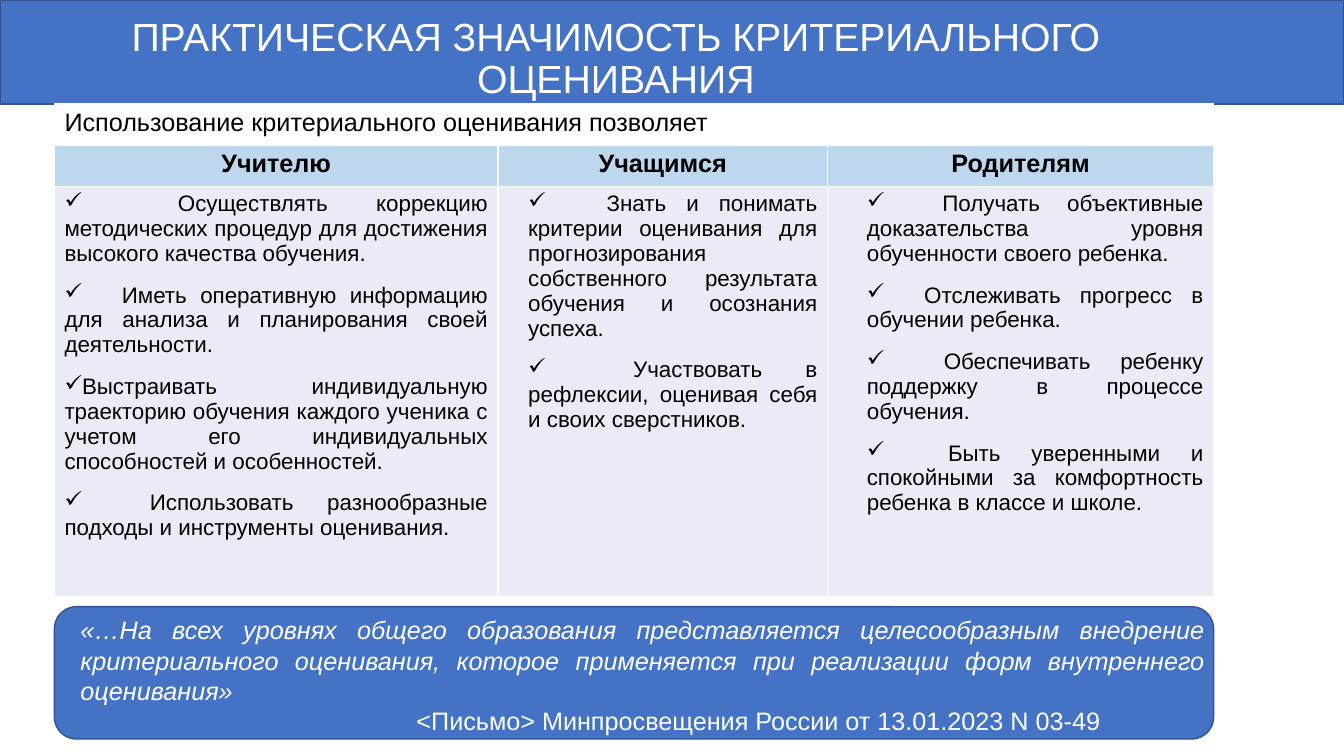
from lxml import etree
from pptx import Presentation
from pptx import util as u
from pptx.dml.color import RGBColor
from pptx.enum import shapes, text
from pptx.oxml.ns import qn

Pt = u.Pt
WHITE = RGBColor(0xFF, 0xFF, 0xFF)
BLACK = RGBColor(0, 0, 0)
BLUE = RGBColor(0x44, 0x72, 0xC4)
NAVY = RGBColor(0x32, 0x54, 0x91)
SKY = RGBColor(0xBD, 0xD7, 0xEE)
PALE = RGBColor(0xE9, 0xEB, 0xF5)
ALIGN = text.PP_ALIGN

TITLE = "ПРАКТИЧЕСКАЯ ЗНАЧИМОСТЬ КРИТЕРИАЛЬНОГО ОЦЕНИВАНИЯ"
INTRO = "Использование критериального оценивания позволяет"
QUOTE = ("«…На всех уровнях общего образования представляется целесообразным внедрение "
         "критериального оценивания, которое применяется при реализации форм внутреннего оценивания»")
SOURCE = "<Письмо> Минпросвещения России от 13.01.2023 N 03-49"

# Each audience: heading, column width, left cell margin, (tab stop, benefit) pairs
AUDIENCES = [
    ("Учителю", 316.8, 7.2, [
        (81, "Осуществлять коррекцию методических процедур для достижения высокого качества обучения."),
        (41, "Иметь оперативную информацию для анализа и планирования своей деятельности."),
        (0, "Выстраивать индивидуальную траекторию обучения каждого ученика с учетом его "
            "индивидуальных способностей и особенностей."),
        (61, "Использовать разнообразные подходы и инструменты оценивания.")]),
    ("Учащимся", 235.4, 21.6, [
        (56, "Знать и понимать критерии оценивания для прогнозирования собственного результата "
             "обучения и осознания успеха."),
        (75, "Участвовать в рефлексии, оценивая себя и своих сверстников.")]),
    ("Родителям", 275.8, 28.1, [
        (54, "Получать объективные доказательства уровня обученности своего ребенка."),
        (41, "Отслеживать прогресс в обучении ребенка."),
        (55, "Обеспечивать ребенку поддержку в процессе обучения."),
        (58, "Быть уверенными и спокойными за комфортность ребенка в классе и школе.")]),
]


def write(p, words, align, **font):
    """Write one run into a paragraph with the given alignment and font values."""
    p.alignment = align
    r = p.add_run()
    r.text = words
    color = font.pop("color", BLACK)
    for name, value in {"name": "Arial", "size": Pt(18), "bold": False, **font}.items():
        setattr(r.font, name, value)
    r.font.color.rgb = color


def add_panel(s, kind, box):
    """Add a blue outlined panel."""
    sp = s.shapes.add_shape(kind, *map(Pt, box))
    sp.shadow.inherit = False
    sp.fill.solid()
    sp.fill.fore_color.rgb = BLUE
    sp.line.color.rgb = NAVY
    sp.line.width = Pt(1)


def add_banner(s, box):
    """Add the top banner and put the slide title over it."""
    left, top, width, height = box
    add_panel(s, shapes.MSO_SHAPE.RECTANGLE, box)
    title = s.shapes.title
    s.shapes._spTree.append(title._element)
    place = {"left": left + 25.9, "top": top + 18, "width": width - 132, "height": height - 24.5}
    for name, value in place.items():
        setattr(title, name, Pt(value))
    tf = title.text_frame
    tf.word_wrap = True
    tf.auto_size = text.MSO_AUTO_SIZE.NONE
    tf.vertical_anchor = text.MSO_ANCHOR.MIDDLE
    p = tf.paragraphs[0]
    p.line_spacing = 0.9
    write(p, TITLE, ALIGN.CENTER, size=Pt(28), color=WHITE)


def format_cell(cell, color, bottom=1):
    """Give a cell white borders and a solid fill."""
    pr = cell._tc.get_or_add_tcPr()
    for side in "LRTB":
        width = bottom if side == "B" else 1
        ln = etree.SubElement(pr, qn(f"a:ln{side}"), w=str(Pt(width)))
        fill = etree.SubElement(ln, qn("a:solidFill"))
        etree.SubElement(fill, qn("a:srgbClr"), val=str(WHITE))
    cell.fill.solid()
    cell.fill.fore_color.rgb = color


def add_benefits(cell, items):
    """Fill a cell with check-marked benefits."""
    tf = cell.text_frame
    for i, (stop, words) in enumerate(items):
        p = tf.add_paragraph() if i else tf.paragraphs[0]
        if i:
            p.space_before = Pt(12)
        pr = p._p.get_or_add_pPr()
        pr.set("marL", "0")
        pr.set("indent", "0")
        etree.SubElement(pr, qn("a:buChar"), char="✓")
        if stop:
            tabs = etree.SubElement(pr, qn("a:tabLst"))
            etree.SubElement(tabs, qn("a:tab"), pos=str(Pt(stop)), algn="l")
        write(p, "\t" + words if stop else words, ALIGN.JUSTIFY, size=Pt(16))


def add_audience_table(s, box):
    """Add the table of benefits for each audience."""
    table = s.shapes.add_table(3, len(AUDIENCES), *map(Pt, box)).table
    for row, height in zip(table.rows, (28.8, 30.2, box[3] - 59)):
        row.height = Pt(height)
    for col, (heading, width, margin, items) in enumerate(AUDIENCES):
        table.columns[col].width = Pt(width)
        intro, head, body = (table.cell(row, col) for row in range(3))
        format_cell(intro, WHITE, 3)
        format_cell(head, SKY)
        format_cell(body, PALE)
        write(head.text_frame.paragraphs[0], heading, ALIGN.CENTER, bold=True)
        body.margin_left = Pt(margin)
        add_benefits(body, items)
    first = table.cell(0, 0)
    first.merge(table.cell(0, len(AUDIENCES) - 1))
    write(first.text_frame.paragraphs[0], INTRO, ALIGN.LEFT)


def add_quote(s, box):
    """Add the quotation and its source."""
    left, top, width, height = box
    sp = s.shapes.add_textbox(Pt(left + 11.5), Pt(top + 2.2), Pt(width - 10.8), Pt(height))
    tf = sp.text_frame
    tf.word_wrap = True
    write(tf.paragraphs[0], QUOTE, ALIGN.JUSTIFY, italic=True, color=WHITE)
    p = tf.add_paragraph()
    p._p.get_or_add_pPr().set("marL", str(Pt(240)))
    write(p, SOURCE, ALIGN.LEFT, color=WHITE)


def main():
    """Build and save the slide."""
    prs = Presentation()
    prs.slide_width, prs.slide_height = Pt(960), Pt(540)
    s = prs.slides.add_slide(prs.slide_layouts[5])
    quote_box = (38.9, 433.4, 828, 94.5)
    add_panel(s, shapes.MSO_SHAPE.ROUNDED_RECTANGLE, quote_box)
    add_banner(s, (0, 0, 960, 74.2))
    add_audience_table(s, (38.9, 74.2, 828, 352))
    add_quote(s, quote_box)
    prs.save("out.pptx")


if __name__ == "__main__":
    main()
